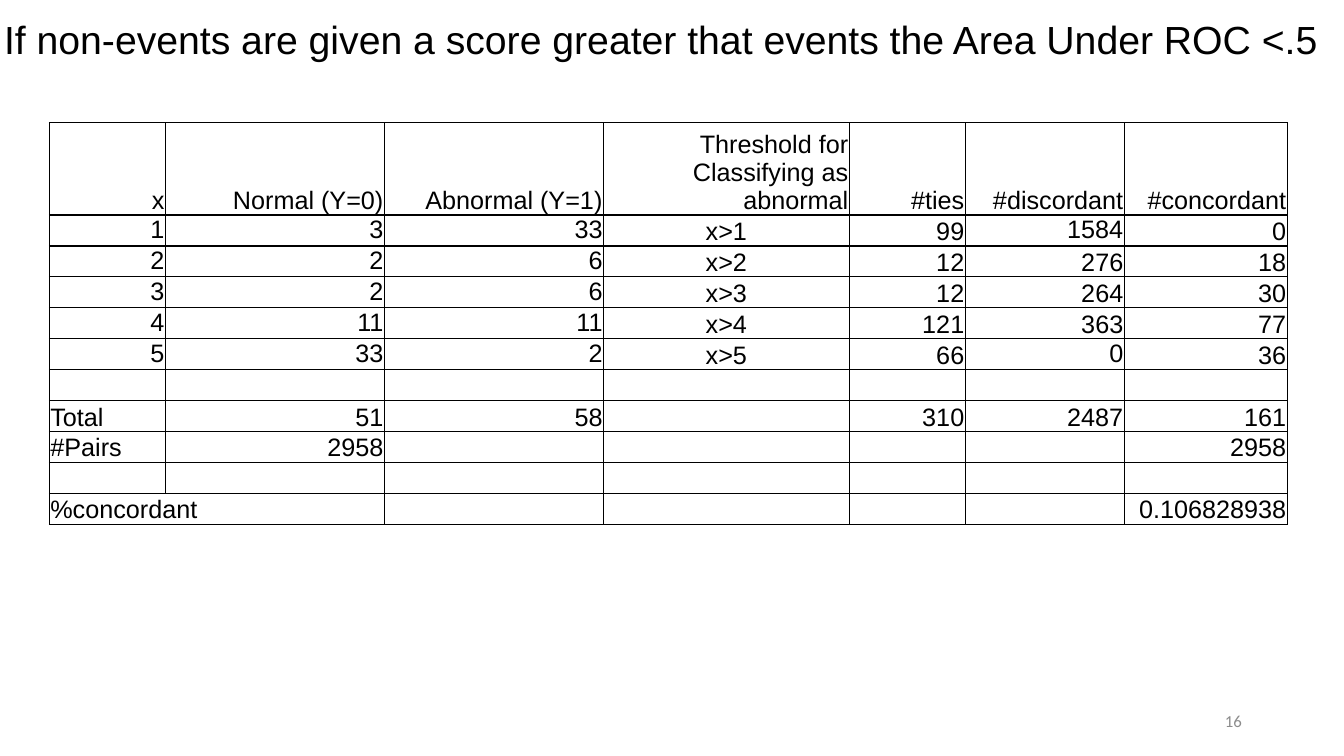
from dataclasses import dataclass

from lxml.etree import SubElement
from pptx import Presentation
from pptx.dml.color import RGBColor
from pptx.enum.text import MSO_ANCHOR, MSO_AUTO_SIZE, PP_ALIGN
from pptx.oxml.ns import qn
from pptx.slide import Slide
from pptx.table import _Cell
from pptx.text.text import TextFrame
from pptx.util import Pt


@dataclass(frozen=True)
class Theme:
    ink: str = "000000"
    muted: str = "8C8C8C"
    font: str = "Arial"
    number_font: str = "Calibri"
    title_size: float = 28
    table_size: float = 18
    number_size: float = 12
    empty_size: float = 12
    border: float = 1


@dataclass(frozen=True)
class Box:
    left: float
    top: float
    width: float
    height: float


@dataclass(frozen=True)
class TextStyle:
    font: str
    size: float
    color: str
    alignment: PP_ALIGN


THEME = Theme()
TITLE_BOX = Box(-4.3, 7.2, 964, 41)
TABLE_BOX = Box(35.3, 87.8, 884.2, 287)
NUMBER_BOX = Box(678.2, 500.4, 216, 28.8)
COLUMN_WIDTHS = (82.8, 156.5, 156.5, 175.6, 82.8, 113.6, 116.4)
HEADER_HEIGHT = 65.8
ROW_HEIGHT = 22.1
THRESHOLD_COLUMN = 3
MERGED_ROW = 10
TOP_ANCHORED = {(row, column) for row in range(1, 6) for column in range(3)} | {(1, 5), (5, 5)}
ROWS = (
    ("x", "Normal (Y=0)", "Abnormal (Y=1)", "Threshold for Classifying as abnormal",
     "#ties", "#discordant", "#concordant"),
    ("1", "3", "33", "x>1", "99", "1584", "0"),
    ("2", "2", "6", "x>2", "12", "276", "18"),
    ("3", "2", "6", "x>3", "12", "264", "30"),
    ("4", "11", "11", "x>4", "121", "363", "77"),
    ("5", "33", "2", "x>5", "66", "0", "36"),
    ("",) * 7,
    ("Total", "51", "58", "", "310", "2487", "161"),
    ("#Pairs", "2958", "", "", "", "", "2958"),
    ("",) * 7,
    ("%concordant", "", "", "", "", "", "0.106828938"),
)


def write_text(text_frame: TextFrame, text: str, style: TextStyle) -> None:
    paragraph = text_frame.paragraphs[0]
    paragraph.alignment = style.alignment
    paragraph.line_spacing = 1.0
    run = paragraph.add_run()
    run.text = text
    for name, value in {"name": style.font, "size": Pt(style.size), "bold": False}.items():
        setattr(run.font, name, value)
    run.font.color.rgb = RGBColor.from_string(style.color)


def add_borders(cell: _Cell) -> None:
    properties = cell._tc.get_or_add_tcPr()
    for position, side in enumerate(("a:lnL", "a:lnR", "a:lnT", "a:lnB")):
        line = SubElement(properties, qn(side), w=str(Pt(THEME.border)))
        fill = SubElement(line, qn("a:solidFill"))
        SubElement(fill, qn("a:srgbClr"), val=THEME.ink)
        properties.insert(position, line)


def cell_alignment(row: int, column: int) -> PP_ALIGN:
    if row > 5 and column == 0:
        return PP_ALIGN.LEFT
    if row > 0 and column == THRESHOLD_COLUMN:
        return PP_ALIGN.CENTER
    return PP_ALIGN.RIGHT


def format_cell(cell: _Cell, text: str, row: int, column: int) -> None:
    cell.fill.background()
    add_borders(cell)
    anchor = MSO_ANCHOR.TOP if (row, column) in TOP_ANCHORED else MSO_ANCHOR.BOTTOM
    cell_format = {
        "margin_left": Pt(0.7),
        "margin_right": Pt(0.7),
        "margin_top": Pt(0.7),
        "margin_bottom": Pt(0),
        "vertical_anchor": anchor,
    }
    for name, value in cell_format.items():
        setattr(cell, name, value)
    if text:
        style = TextStyle(THEME.font, THEME.table_size, THEME.ink, cell_alignment(row, column))
        write_text(cell.text_frame, text, style)
    else:
        paragraph = cell.text_frame.paragraphs[0]
        SubElement(paragraph._p, qn("a:endParaRPr"), sz=str(int(THEME.empty_size * 100)))


def lengths(box: Box) -> tuple[Pt, Pt, Pt, Pt]:
    return Pt(box.left), Pt(box.top), Pt(box.width), Pt(box.height)


def add_title(slide: Slide) -> None:
    title = slide.shapes.title
    title.left, title.top, title.width, title.height = lengths(TITLE_BOX)
    text_frame = title.text_frame
    frame_format = {
        "word_wrap": True,
        "auto_size": MSO_AUTO_SIZE.NONE,
        "vertical_anchor": MSO_ANCHOR.TOP,
    }
    for name, value in frame_format.items():
        setattr(text_frame, name, value)
    write_text(
        text_frame,
        "If non-events are given a score greater that events the Area Under ROC <.5",
        TextStyle(THEME.font, THEME.title_size, THEME.ink, PP_ALIGN.LEFT),
    )


def add_score_table(slide: Slide) -> None:
    table = slide.shapes.add_table(len(ROWS), len(COLUMN_WIDTHS), *lengths(TABLE_BOX)).table
    for name in ("first_row", "horz_banding"):
        setattr(table, name, False)
    for column, width in zip(table.columns, COLUMN_WIDTHS):
        column.width = Pt(width)
    for row, texts in enumerate(ROWS):
        table.rows[row].height = Pt(ROW_HEIGHT if row else HEADER_HEIGHT)
        for column, text in enumerate(texts):
            format_cell(table.cell(row, column), text, row, column)
    table.cell(MERGED_ROW, 0).merge(table.cell(MERGED_ROW, 1))


def add_slide_number(slide: Slide) -> None:
    text_frame = slide.shapes.add_textbox(*lengths(NUMBER_BOX)).text_frame
    text_frame.word_wrap = True
    text_frame.vertical_anchor = MSO_ANCHOR.MIDDLE
    style = TextStyle(THEME.number_font, THEME.number_size, THEME.muted, PP_ALIGN.RIGHT)
    write_text(text_frame, "16", style)


def main() -> None:
    presentation = Presentation()
    presentation.slide_width = Pt(960)
    presentation.slide_height = Pt(540)
    slide = presentation.slides.add_slide(presentation.slide_layouts.get_by_name("Title Only"))
    add_title(slide)
    add_score_table(slide)
    add_slide_number(slide)
    presentation.save("out.pptx")


if __name__ == "__main__":
    main()
